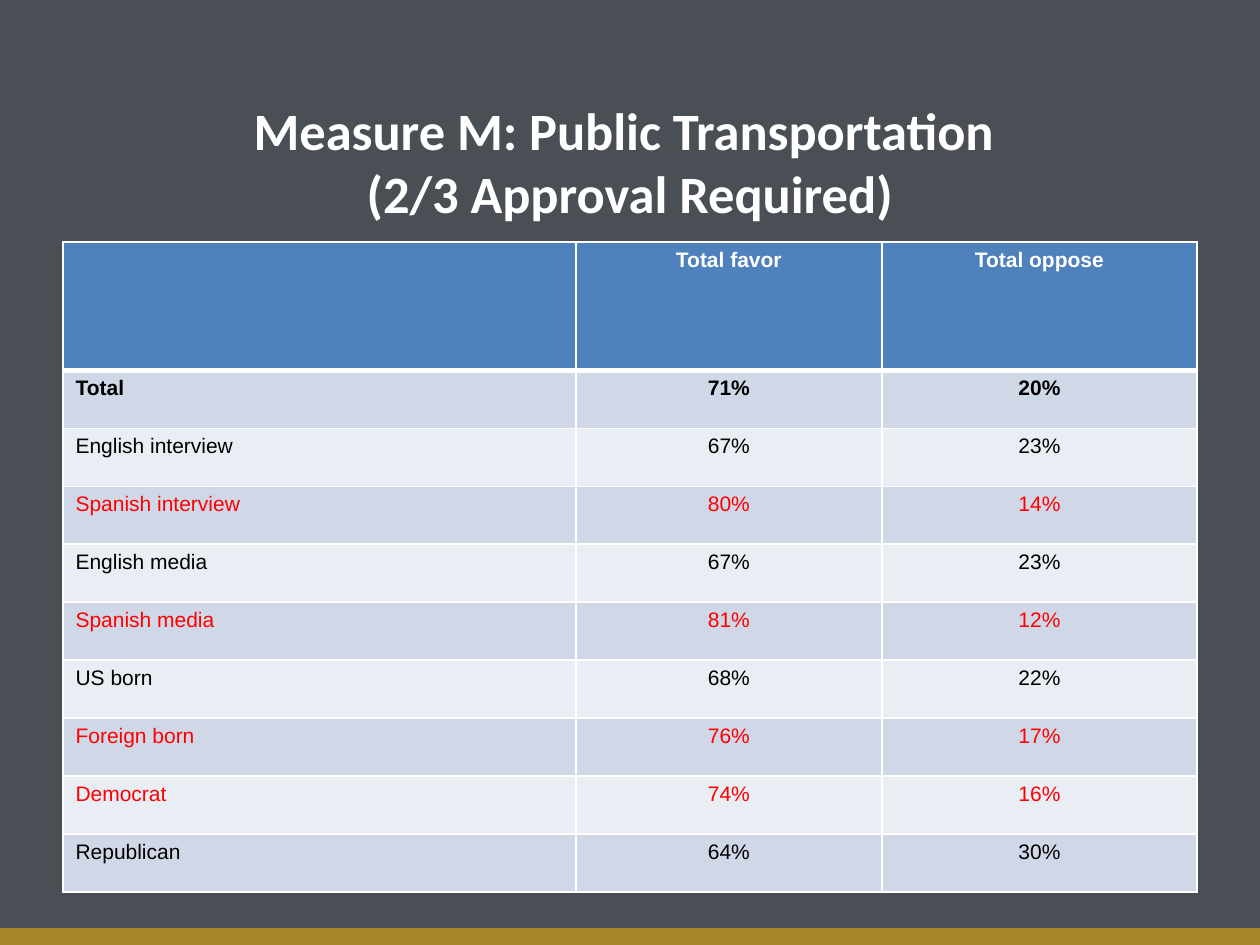
from lxml.etree import SubElement
from pptx import Presentation
from pptx.dml.color import RGBColor
from pptx.enum.shapes import MSO_SHAPE
from pptx.enum.text import MSO_ANCHOR, PP_ALIGN
from pptx.oxml.ns import qn
from pptx.util import Inches, Pt

COLORS = {
    "background": "4A4F55",
    "gold": "A58629",
    "header": "4F81BD",
    "band_dark": "D0D8E8",
    "band_light": "E9EDF4",
    "white": "FFFFFF",
    "black": "000000",
    "red": "FF0000",
}
HEADINGS = ("", "Total favor", "Total oppose")
RESULTS = [
    ("Total", "71%", "20%"),
    ("English interview", "67%", "23%"),
    ("Spanish interview", "80%", "14%"),
    ("English media", "67%", "23%"),
    ("Spanish media", "81%", "12%"),
    ("US born", "68%", "22%"),
    ("Foreign born", "76%", "17%"),
    ("Democrat", "74%", "16%"),
    ("Republican", "64%", "30%"),
]
HIGHLIGHTED = {"Spanish interview", "Spanish media", "Foreign born", "Democrat"}
COLUMN_WIDTHS = (4.07, 2.43, 2.5)
HEADER_HEIGHT, ROW_HEIGHT = 1.02, 0.46


def rgb(color):
    return RGBColor.from_string(COLORS[color])


class SlideBuilder:
    """Holds the fonts and the slide being filled."""

    title_font, table_font = "Calibri", "Arial"

    def __init__(self, slide):
        self.slide = slide
        slide.background.fill.solid()
        slide.background.fill.fore_color.rgb = rgb("background")

    def format_paragraph(self, paragraph, font_name, size, color, bold, align):
        paragraph.alignment = align
        font = paragraph.font
        font.name, font.size, font.bold = font_name, Pt(size), bold
        font.color.rgb = rgb(color)

    def bar(self, left, top, width, height, color):
        bar = self.slide.shapes.add_shape(
            MSO_SHAPE.RECTANGLE, Inches(left), Inches(top), Inches(width), Inches(height))
        bar.shadow.inherit = False
        bar.fill.solid()
        bar.fill.fore_color.rgb = rgb(color)
        bar.line.color.rgb = rgb(color)
        bar.line.width = Pt(0.75)

    def title(self, text, left, top, width, height):
        title = self.slide.shapes.title
        title.left, title.top = Inches(left), Inches(top)
        title.width, title.height = Inches(width), Inches(height)
        title.text_frame.text = text
        title.text_frame.vertical_anchor = MSO_ANCHOR.MIDDLE
        self.format_paragraph(title.text_frame.paragraphs[0], self.title_font,
                              30, "white", True, PP_ALIGN.CENTER)

    def borders(self, cell, top=1, bottom=1):
        """Draw white cell edges; they must come before the fill in the XML."""
        properties = cell._tc.get_or_add_tcPr()
        for side, points in (("L", 1), ("R", 1), ("T", top), ("B", bottom)):
            edge = SubElement(properties, qn(f"a:ln{side}"), w=str(Pt(points)))
            fill = SubElement(edge, qn("a:solidFill"))
            SubElement(fill, qn("a:srgbClr"), val=COLORS["white"])

    def table(self, headings, results, left, top):
        rows = [headings, *results]
        height = HEADER_HEIGHT + ROW_HEIGHT * len(results)
        table = self.slide.shapes.add_table(
            len(rows), len(headings), Inches(left), Inches(top),
            Inches(sum(COLUMN_WIDTHS)), Inches(height)).table
        for column, width in zip(table.columns, COLUMN_WIDTHS):
            column.width = Inches(width)
        for r, values in enumerate(rows):
            is_header = r == 0
            table.rows[r].height = Inches(HEADER_HEIGHT if is_header else ROW_HEIGHT)
            if is_header:
                fill, color = "header", "white"
            else:
                fill = "band_dark" if r % 2 else "band_light"
                color = "red" if values[0] in HIGHLIGHTED else "black"
            for c, value in enumerate(values):
                cell = table.cell(r, c)
                self.borders(cell, top=3 if r == 1 else 1, bottom=3 if is_header else 1)
                cell.fill.solid()
                cell.fill.fore_color.rgb = rgb(fill)
                cell.text = value
                self.format_paragraph(
                    cell.text_frame.paragraphs[0], self.table_font, 12, color,
                    is_header or values[0] == "Total",
                    PP_ALIGN.CENTER if c else PP_ALIGN.LEFT)


def main():
    deck = Presentation()
    deck.slide_width, deck.slide_height = Inches(10), Inches(7.5)
    title_only = deck.slide_layouts[5]
    builder = SlideBuilder(deck.slides.add_slide(title_only))
    builder.bar(0, 7.37, 10, 0.13, "gold")
    builder.title("Measure M: Public Transportation \v(2/3 Approval Required)",
                  0.5, 0.8, 9, 0.95)
    builder.table(HEADINGS, RESULTS, 0.5, 1.92)
    deck.save("out.pptx")


if __name__ == "__main__":
    main()
